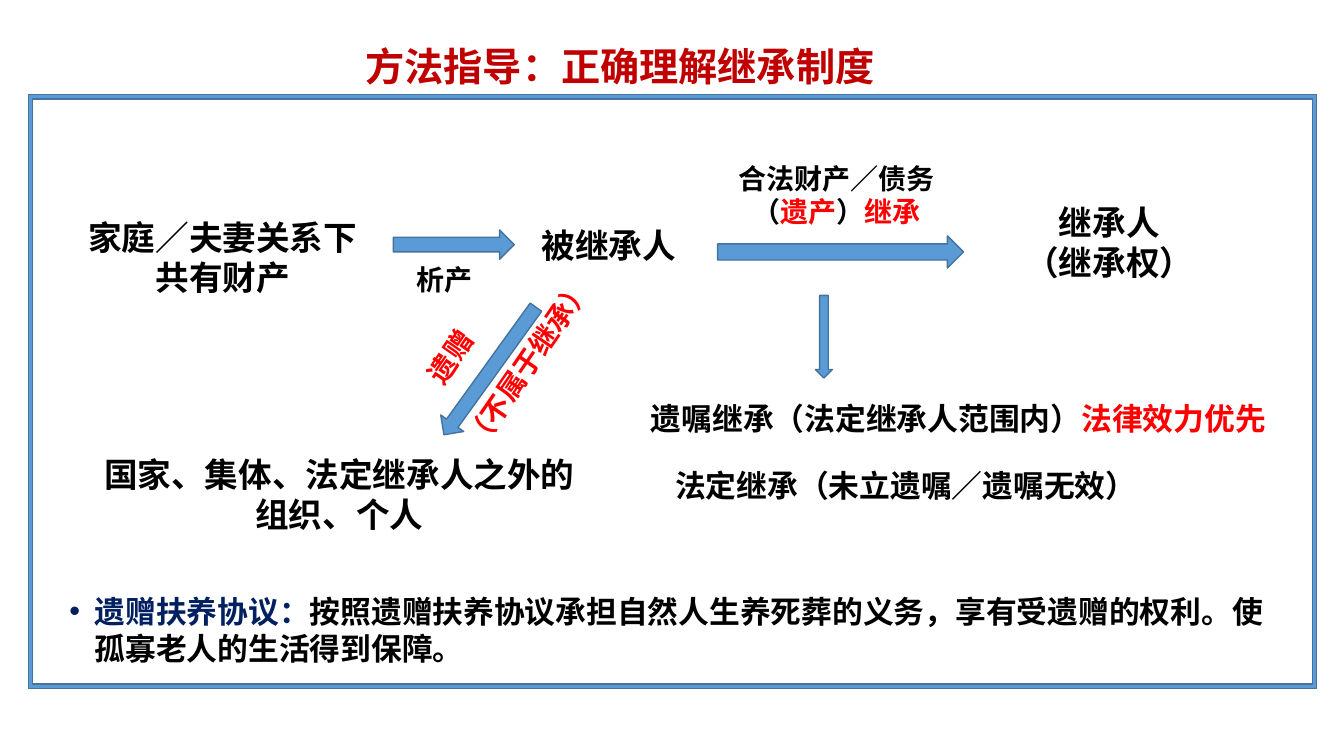
from lxml.etree import SubElement
from pptx import Presentation
from pptx.dml.color import RGBColor
from pptx.enum.shapes import MSO_SHAPE
from pptx.enum.text import MSO_AUTO_SIZE, PP_ALIGN
from pptx.oxml.ns import qn
from pptx.util import Pt

FONT = "Noto Sans CJK SC"
BLACK = RGBColor(0x00, 0x00, 0x00)
RED = RGBColor(0xFF, 0x00, 0x00)
DARK_RED = RGBColor(0xC0, 0x00, 0x00)
NAVY = RGBColor(0x00, 0x20, 0x60)
BLUE = RGBColor(0x5B, 0x9B, 0xD5)
BLUE_EDGE = RGBColor(0x43, 0x73, 0x9E)
LEFT, CENTER = PP_ALIGN.LEFT, PP_ALIGN.CENTER

deck = Presentation()
deck.slide_width, deck.slide_height = Pt(960), Pt(540)
slide = deck.slides.add_slide(deck.slide_layouts[6])


def add_label(box, size, paragraphs, align=LEFT, rotation=0):
    """Add a text box; each paragraph is a list of (text, colour) runs."""
    label = slide.shapes.add_textbox(*map(Pt, box))
    label.rotation = rotation
    frame = label.text_frame
    frame.word_wrap = True
    frame.auto_size = MSO_AUTO_SIZE.SHAPE_TO_FIT_TEXT
    for i, runs in enumerate(paragraphs):
        paragraph = frame.add_paragraph() if i else frame.paragraphs[0]
        paragraph.alignment = align
        for text, colour in runs:
            run = paragraph.add_run()
            run.text = text
            run.font.color.rgb = colour
            for name, value in {"size": Pt(size), "bold": True, "name": FONT}.items():
                setattr(run.font, name, value)
            SubElement(run.font._element, qn("a:ea"), typeface=FONT)
    return frame.paragraphs


def add_blue_shape(kind, box, rotation=0):
    shape = slide.shapes.add_shape(kind, *map(Pt, box))
    shape.rotation = rotation
    shape.shadow.inherit = False
    shape.fill.solid()
    shape.fill.fore_color.rgb = BLUE
    shape.line.color.rgb = BLUE_EDGE
    shape.line.width = Pt(1)
    return shape


# Title
add_label((254, 26.6, 382.5, 41), 28, [[("方法指导：正确理解继承制度", DARK_RED)]])

# Bequest label, on both sides of its slanted arrow
bequest, not_inheritance = add_label(
    (279.4, 204.5, 157.7, 80), 20,
    [[("遗赠", RED)], [("（不属于继承）", RED)]], rotation=304.5)
bequest._p.get_or_add_pPr().set("indent", str(Pt(22.5)))
not_inheritance.space_before = Pt(24)

# Arrows between the parties
for kind, box, rotation in [
    (MSO_SHAPE.RIGHT_ARROW, (293.8, 254.9, 112.3, 20.2), 125.8),
    (MSO_SHAPE.RIGHT_ARROW, (281, 164.2, 86.4, 21), 0),
    (MSO_SHAPE.RIGHT_ARROW, (512.6, 168.5, 175.7, 23), 0),
    (MSO_SHAPE.DOWN_ARROW, (582.5, 211, 12.2, 59), 0),
]:
    add_blue_shape(kind, box, rotation)

# Parties and the steps between them
for box, size, align, paragraphs in [
    ((290.2, 184.3, 67, 31.7), 20, LEFT, [[("析产", BLACK)]]),
    ((512.6, 111.6, 170, 55.4), 20, CENTER,
     [[("合法财产／债务", BLACK)],
      [("（", BLACK), ("遗产", RED), ("）", BLACK), ("继承", RED)]]),
    ((475.2, 329.8, 370, 33.8), 22, LEFT,
     [[("法定继承（未立遗嘱／遗嘱无效）", BLACK)]]),
    ((457.9, 282.2, 482.4, 33.8), 22, LEFT,
     [[("遗嘱继承（法定继承人范围内）", BLACK), ("法律效力优先", RED)]]),
    ((64.8, 320.4, 355, 65.5), 24, CENTER,
     [[("国家、集体、法定继承人之外的组织、个人", BLACK)]]),
    ((52.6, 151.2, 213, 65.5), 24, CENTER,
     [[("家庭／夫妻关系下", BLACK)], [("共有财产", BLACK)]]),
    ((362.9, 157, 144, 36), 24, CENTER, [[("被继承人", BLACK)]]),
    ((708.5, 140.4, 167.8, 65.5), 24, CENTER,
     [[("继承人", BLACK)], [("（继承权）", BLACK)]]),
]:
    add_label(box, size, paragraphs, align)

# Bulleted note on the support agreement
note, = add_label(
    (42.5, 419.8, 879, 60.5), 22,
    [[("遗赠扶养协议：", NAVY),
      ("按照遗赠扶养协议承担自然人生养死葬的义务，享有受遗赠的权利。"
       "使孤寡老人的生活得到保障。", BLACK)]])
note_format = note._p.get_or_add_pPr()
for name, value in {"marL": Pt(18), "indent": Pt(-18)}.items():
    note_format.set(name, str(value))
SubElement(note_format, qn("a:buFont"), typeface="Arial")
SubElement(note_format, qn("a:buChar"), char="•")

# Border around the diagram
border = add_blue_shape(MSO_SHAPE.FRAME, (20.2, 67.7, 920.2, 424))
border.adjustments[0] = 0.007

deck.save("out.pptx")
